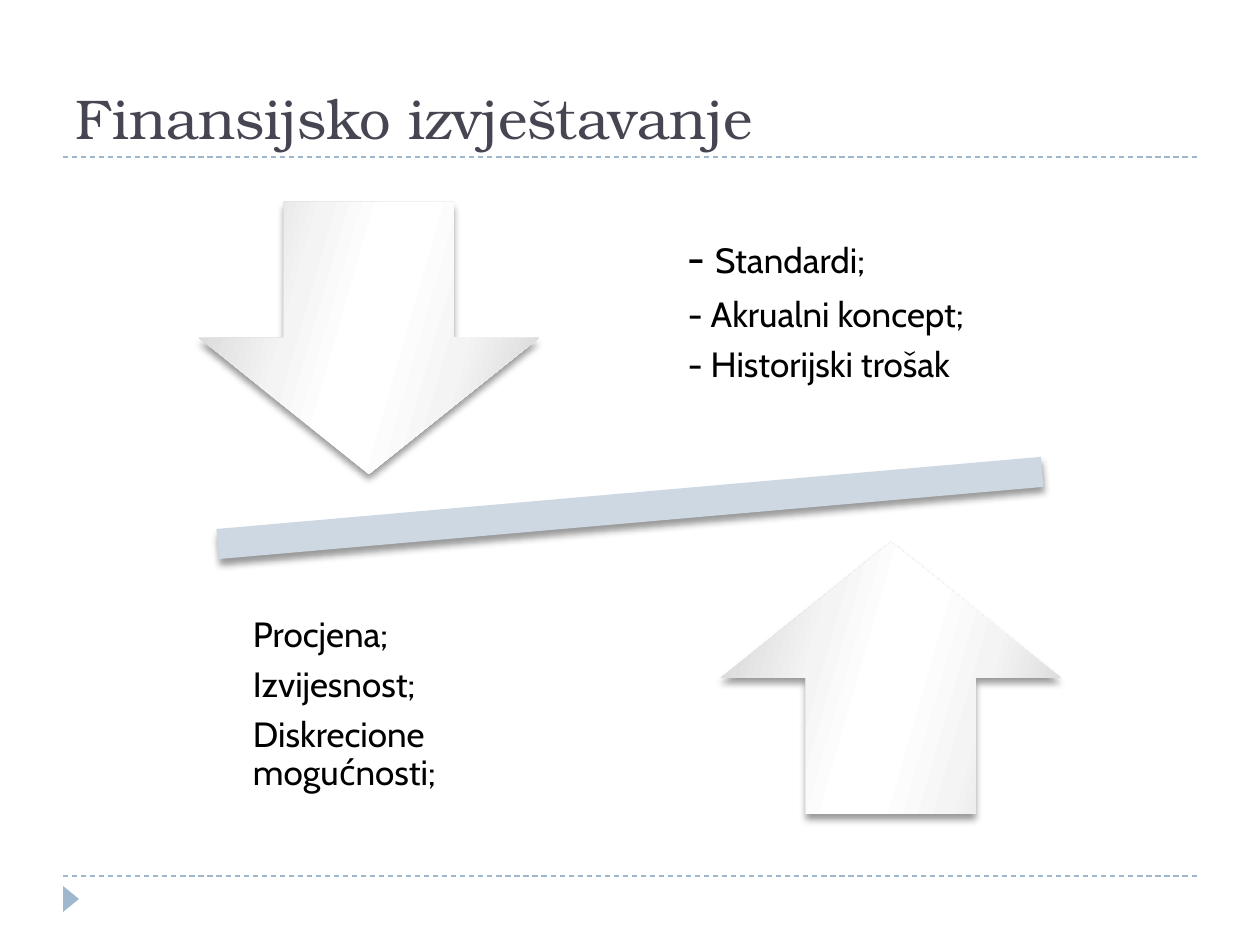
from lxml import etree
from pptx import Presentation
from pptx import util as u
from pptx.dml.color import RGBColor
from pptx.enum import dml, shapes, text
from pptx.oxml.ns import qn

PX = 914400 / 126
ACCENT, BEAM, INK, BLACK = "9FB8CD", "CDD8E3", "464653", "000000"
SHEEN = [(0, "D1D1D1"), (30, "F4F4F4"), (45, "FFFFFF"),
         (55, "FFFFFF"), (73, "F4F4F4"), (100, "D1D1D1")]


def px(n):
    return u.Emu(round(n * PX))


def rgb(value):
    return RGBColor.from_string(value)


def add_run(p, words, size, font, color):
    r = p.add_run()
    r.text = words
    r.font.size, r.font.name = u.Pt(size), font
    r.font.color.rgb = rgb(color)


def add_title(s, words, *box):
    sp = s.shapes.title
    sp.left, sp.top, sp.width, sp.height = map(px, box)
    tf = sp.text_frame
    tf.vertical_anchor = text.MSO_ANCHOR.BOTTOM
    tf.auto_size = text.MSO_AUTO_SIZE.NONE
    p = tf.paragraphs[0]
    p.alignment = text.PP_ALIGN.LEFT
    add_run(p, words, 32, "TeX Gyre Bonum", INK)


def add_rule(s, y):
    line = s.shapes.add_connector(shapes.MSO_CONNECTOR.STRAIGHT,
                                  px(63), px(y), px(1197), px(y))
    line.line.color.rgb = rgb(ACCENT)
    line.line.width = u.Pt(0.75)
    line.line.dash_style = dml.MSO_LINE.DASH
    etree.SubElement(line._element.spPr, qn("a:effectLst"))


def add_shape(s, kind, box, rotation=0):
    sp = s.shapes.add_shape(kind, *map(px, box))
    sp.rotation = rotation
    sp.shadow.inherit = False
    sp.line.fill.background()
    return sp


def fill_solid(sp, color):
    sp.fill.solid()
    sp.fill.fore_color.rgb = rgb(color)


def fill_sheen(sp):
    sp.fill.gradient()
    sp.fill.gradient_angle = 344  # counter-clockwise, so 16 degrees clockwise
    stops = sp._element.spPr.find(".//" + qn("a:gsLst"))
    for old in list(stops):
        stops.remove(old)
    for pos, color in SHEEN:
        gs = etree.SubElement(stops, qn("a:gs"), pos=str(pos * 1000))
        etree.SubElement(gs, qn("a:srgbClr"), val=color)


def add_shadow(sp):
    effects = sp._element.spPr.find(qn("a:effectLst"))
    shadow = etree.SubElement(
        effects, qn("a:outerShdw"), blurRad=str(u.Pt(4)), dist=str(u.Pt(3.4)),
        dir="5400000", rotWithShape="0")
    color = etree.SubElement(shadow, qn("a:srgbClr"), val=BLACK)
    etree.SubElement(color, qn("a:alpha"), val="40000")


def add_list(s, box, inset, paragraphs):
    """Each paragraph is a list of (words, size) runs."""
    tf = s.shapes.add_textbox(*map(px, box)).text_frame
    tf.word_wrap = True
    tf.vertical_anchor = text.MSO_ANCHOR.MIDDLE
    tf.margin_left = tf.margin_right = px(inset)
    tf.margin_top = tf.margin_bottom = px(inset)
    for i, runs in enumerate(paragraphs):
        p = tf.add_paragraph() if i else tf.paragraphs[0]
        p.line_spacing = 0.9
        p.space_after = u.Pt(0.35 * max(size for _, size in runs))
        for words, size in runs:
            add_run(p, words, size, "Cabin", BLACK)


def main():
    prs = Presentation()
    prs.slide_width, prs.slide_height = px(1260), px(945)
    s = prs.slides.add_slide(prs.slide_layouts[5])
    kinds = shapes.MSO_SHAPE

    # Frame: rules, corner marker and title
    for y in (876, 157):
        add_rule(s, y)
    marker = add_shape(s, kinds.ISOSCELES_TRIANGLE, (58, 891, 26, 16), 90)
    fill_solid(marker, ACCENT)
    add_title(s, "Finansijsko izvještavanje", 63, 21, 1134, 136)

    # Tilted beam
    beam = add_shape(s, kinds.MATH_MINUS, (67, 444, 1126, 128), 355)
    fill_solid(beam, BEAM)
    add_shadow(beam)

    # Opposing arrows
    for kind, x, y in ((kinds.DOWN_ARROW, 199, 202), (kinds.UP_ARROW, 721, 542)):
        arrow = add_shape(s, kind, (x, y, 340, 272))
        fill_sheen(arrow)
        add_shadow(arrow)

    # Lists beside the arrows
    add_list(s, (664, 168, 363, 286), 24, [
        [("- ", 24), ("Standardi;", 20)],
        [("- Akrualni koncept;", 20)],
        [("- Historijski trošak", 20)]])
    add_list(s, (233, 562, 363, 286), 20, [
        [("Procjena;", 20)],
        [("Izvijesnost;", 20)],
        [("Diskrecione mogućnosti;", 20)]])

    prs.save("out.pptx")


if __name__ == "__main__":
    main()
